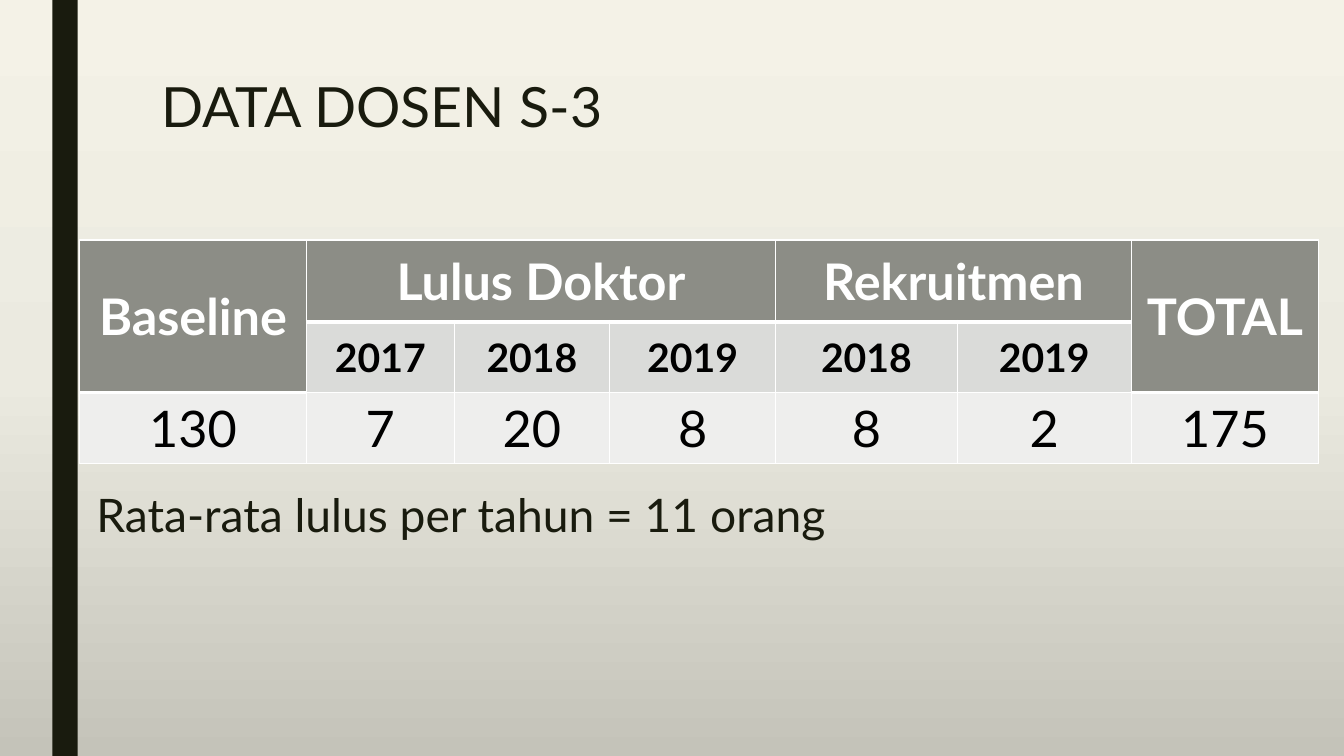
import copy

import lxml.etree
import pptx
import pptx.dml.color
import pptx.enum.shapes
import pptx.enum.text
import pptx.oxml.ns
import pptx.util

Cm = pptx.util.Cm
qn = pptx.oxml.ns.qn
DARK = "191B0E"
WHITE = "FFFFFF"
WIDTHS = [5.71, 3.73, 3.91, 4.19, 4.57, 4.39, 4.72]
HEIGHTS = [2.06, 1.78, 1.78]
ROWS = [
    ["Baseline", "Lulus Doktor", "", "", "Rekruitmen", "", "TOTAL"],
    ["", "2017", "2018", "2019", "2018", "2019", ""],
    ["130", "7", "20", "8", "8", "2", "175"],
]
SPANS = [(0, 0, 1, 0), (0, 1, 0, 3), (0, 4, 0, 5), (0, 6, 1, 6)]
STYLES = [
    {"fill": "8C8D86", "font": {"size": 36, "color": WHITE, "bold": True}},
    {"fill": "DADBD9", "font": {"size": 28, "color": "000000", "bold": True}},
    {"fill": "EEEEED", "font": {"size": 36, "color": "000000", "bold": False}},
]


def tint(text):
    """Turn a hex string into a colour."""
    return pptx.dml.color.RGBColor.from_string(text)


def style(font, size, color, bold=False):
    """Apply the slide's type to a font."""
    look = {"name": "Lato", "size": pptx.util.Pt(size), "bold": bold}
    for key, value in look.items():
        setattr(font, key, value)
    font.color.rgb = tint(color)


def paint(slide):
    """Give the slide its three-stop gradient."""
    fill = slide.background.fill
    fill.gradient()
    fill.gradient_angle = 270
    first = slide.element.find(".//" + qn("a:gs"))
    first.addnext(copy.deepcopy(first))
    stops = zip(fill.gradient_stops, (0, 0.5, 1), ("F4F2E7", "EBEAE0", "C4C3B9"))
    for stop, place, color in stops:
        stop.position = place
        stop.color.rgb = tint(color)


def add_bar(slide):
    """Draw the dark bar on the left."""
    kind = pptx.enum.shapes.MSO_SHAPE.RECTANGLE
    bar = slide.shapes.add_shape(kind, Cm(1.32), 0, Cm(0.64), Cm(19.05))
    bar.shadow.inherit = False
    bar.fill.solid()
    bar.fill.fore_color.rgb = tint(DARK)
    bar.line.fill.background()


def add_text(slide, text, left, top, size, space):
    """Add a line of text in a box."""
    box = slide.shapes.add_textbox(Cm(left), Cm(top), Cm(26.67), Cm(2.31))
    box.text_frame.word_wrap = True
    line = box.text_frame.paragraphs[0]
    line.text = text
    line.line_spacing = space
    style(line.runs[0].font, size, DARK)


def edge(cell, side, width):
    """Draw one white border of a cell."""
    props = cell._tc.get_or_add_tcPr()
    line = lxml.etree.SubElement(props, qn("a:ln" + side), w=str(pptx.util.Pt(width)))
    fill = lxml.etree.SubElement(line, qn("a:solidFill"))
    lxml.etree.SubElement(fill, qn("a:srgbClr"), val=WHITE)


def fill_cell(cell, text, look, thick):
    """Write and format one table cell."""
    for side, width in {"L": 1, "R": 1, "T": 1, "B": 3 if thick else 1}.items():
        edge(cell, side, width)
    cell.fill.solid()
    cell.fill.fore_color.rgb = tint(look["fill"])
    cell.vertical_anchor = pptx.enum.text.MSO_ANCHOR.MIDDLE
    line = cell.text_frame.paragraphs[0]
    line.alignment = pptx.enum.text.PP_ALIGN.CENTER
    if text:
        line.text = text
    style(line.font, **look["font"])


def add_grid(slide):
    """Add the table of lecturers."""
    size = len(ROWS), len(WIDTHS)
    frame = slide.shapes.add_table(
        *size, Cm(2.01), Cm(6.05), Cm(sum(WIDTHS)), Cm(sum(HEIGHTS)))
    grid = frame.table
    for key in ("first_row", "horz_banding"):
        setattr(grid, key, False)
    for col, width in zip(grid.columns, WIDTHS):
        col.width = Cm(width)
    for row, height in zip(grid.rows, HEIGHTS):
        row.height = Cm(height)
    for r, words in enumerate(ROWS):
        for c, text in enumerate(words):
            thick = r == 0 or (r == 1 and not text)
            fill_cell(grid.cell(r, c), text, STYLES[r], thick)
    for top, left, low, right in SPANS:
        grid.cell(top, left).merge(grid.cell(low, right))


def main():
    """Build and save the slide."""
    deck = pptx.Presentation()
    for key, value in {"slide_width": 33.87, "slide_height": 19.05}.items():
        setattr(deck, key, Cm(value))
    slide = deck.slides.add_slide(deck.slide_layouts[6])
    paint(slide)
    add_bar(slide)
    add_text(slide, "DATA DOSEN S-3", 3.81, 1.9, 39.6, 0.89)
    add_grid(slide)
    add_text(slide, "Rata-rata lulus per tahun = 11 orang", 2.18, 12.52, 33, 0.69)
    deck.save("out.pptx")


if __name__ == "__main__":
    main()
